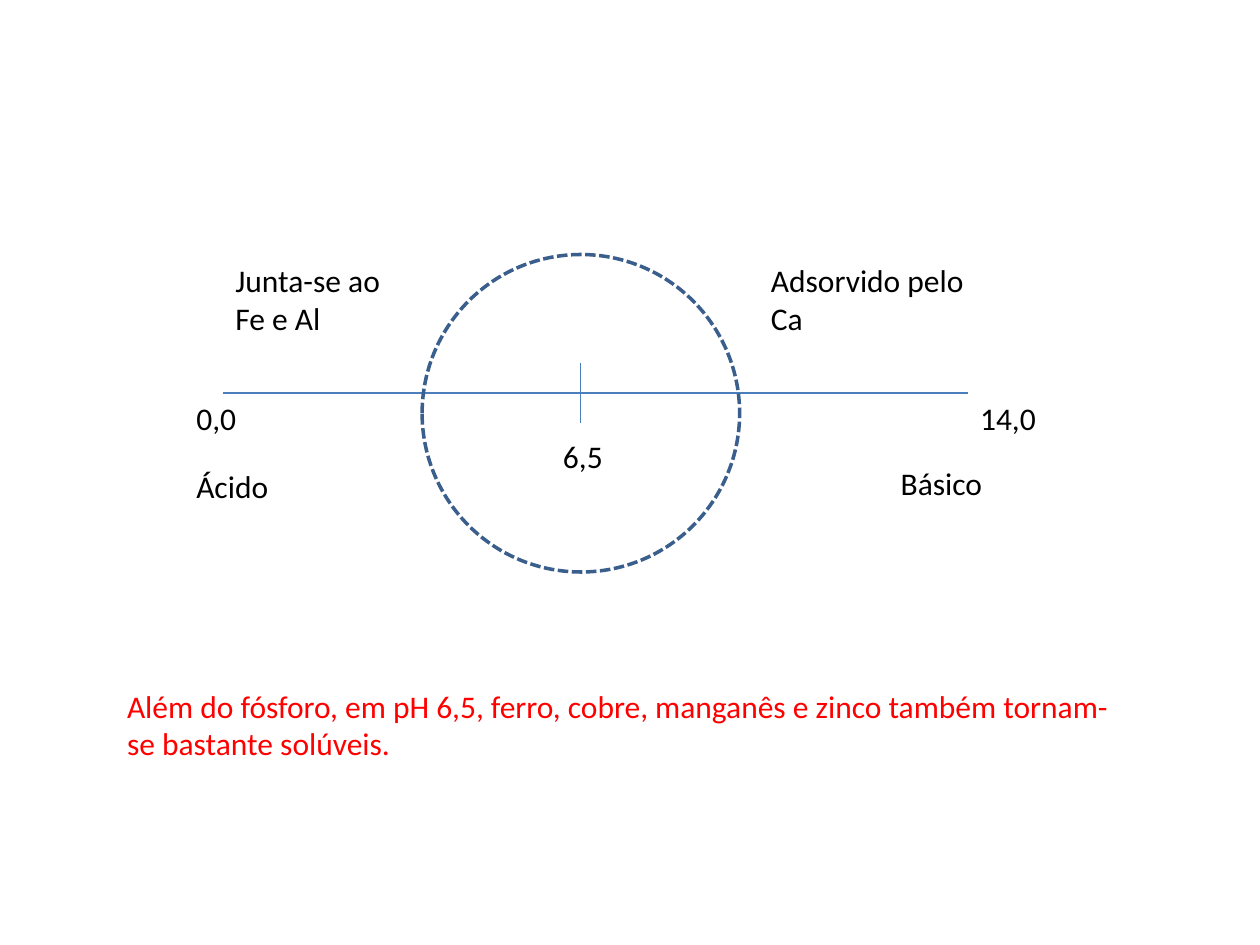
from lxml import etree
from pptx import Presentation
from pptx import util as u
from pptx.dml.color import RGBColor
from pptx.enum import dml, shapes, text
from pptx.oxml.ns import qn

COLORS = {"axis": "4B7EBC", "ring": "3A5F8C", "text": "000000", "note": "FF0000"}
FONT = "Calibri"


def add_label(parent, left, top, width, height, wording, color="text"):
    s = parent.add_textbox(left, top, width, height)
    tf = s.text_frame
    tf.word_wrap = True
    tf.auto_size = text.MSO_AUTO_SIZE.SHAPE_TO_FIT_TEXT
    tf.text = wording
    for p in tf.paragraphs:
        for r in p.runs:
            r.font.size = u.Pt(18)
            r.font.name = FONT
            r.font.color.rgb = RGBColor.from_string(COLORS[color])


def add_line(parent, x1, y1, x2, y2):
    s = parent.add_connector(shapes.MSO_CONNECTOR.STRAIGHT, x1, y1, x2, y2)
    s.line.color.rgb = RGBColor.from_string(COLORS["axis"])
    s.line.width = u.Pt(0.75)
    etree.SubElement(s._element.spPr, qn("a:effectLst"))


def add_ring(parent, left, top, size):
    s = parent.add_shape(shapes.MSO_SHAPE.OVAL, left, top, size, size)
    s.shadow.inherit = False
    s.fill.background()
    s.line.color.rgb = RGBColor.from_string(COLORS["ring"])
    s.line.width = u.Pt(2)
    s.line.dash_style = dml.MSO_LINE.SQUARE_DOT


def add_ph_scale(slide, left, top, width):
    """Draw the pH axis with its labels and the ring around the optimum."""
    group = slide.shapes.add_group_shape().shapes
    axis_y = top + u.Inches(1.1)
    axis_left, axis_right = left + u.Inches(0.31), left + width
    middle = left + u.Inches(3.15)
    half_tick = u.Inches(0.24)
    ring_size = u.Inches(2.52)
    line_h, two_lines_h = u.Inches(0.4), u.Inches(0.71)

    add_line(group, axis_left, axis_y, axis_right, axis_y)
    add_line(group, middle, axis_y - half_tick, middle, axis_y + half_tick)

    add_label(group, middle - half_tick, axis_y + u.Inches(0.3),
              u.Inches(0.87), line_h, "6,5")
    for x, dy, wording in (
        (left + u.Inches(5.59), 0.51, "Básico"),
        (left, 0.54, "Ácido"),
    ):
        add_label(group, x, axis_y + u.Inches(dy), u.Inches(1.34), line_h, wording)
    for x, wording in (
        (axis_left, "Junta-se ao\nFe e Al"),
        (left + u.Inches(4.56), "Adsorvido pelo Ca"),
    ):
        add_label(group, x, top, u.Inches(1.89), two_lines_h, wording)

    add_ring(group, middle - ring_size // 2, top, ring_size)

    for x, wording in ((axis_right, "14,0"), (left, "0,0")):
        add_label(slide.shapes, x, axis_y, u.Inches(0.79), line_h, wording)


def add_note(slide, left, top, width, height):
    add_label(slide.shapes, left, top, width, height,
              "Além do fósforo, em pH 6,5, ferro, cobre, manganês e zinco "
              "também tornam-se bastante solúveis.", "note")


def main():
    prs = Presentation()
    prs.slide_width, prs.slide_height = u.Inches(10), u.Inches(7.5)
    slide = prs.slides.add_slide(prs.slide_layouts[6])
    add_ph_scale(slide, u.Inches(1.46), u.Inches(2.02), u.Inches(6.22))
    add_note(slide, u.Inches(0.91), u.Inches(5.4), u.Inches(8.11), u.Inches(0.71))
    prs.save("out.pptx")


if __name__ == "__main__":
    main()
